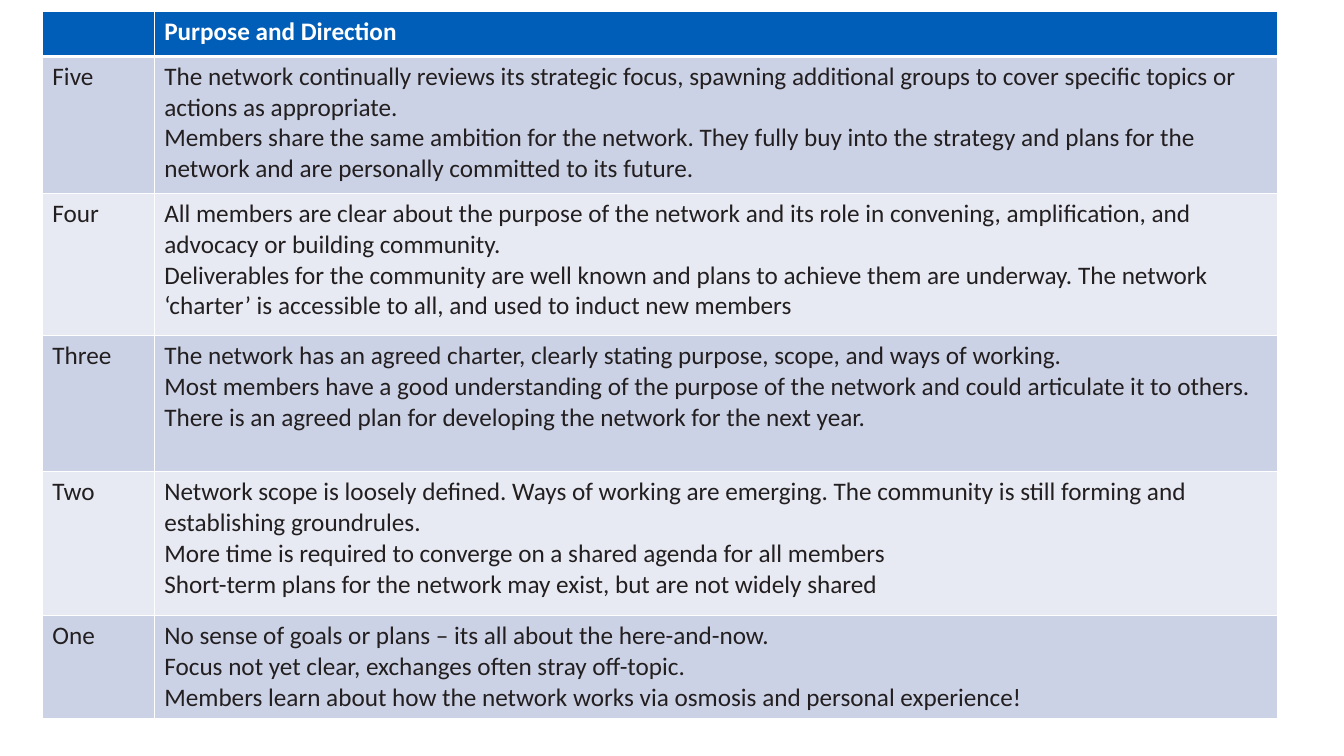
"""Builds a slide with a maturity table for a network's purpose and direction."""
from lxml.etree import SubElement
from pptx import Presentation
from pptx.dml.color import RGBColor
from pptx.oxml.ns import qn
from pptx.util import Pt

PX = 9144
WHITE = RGBColor(0xFF, 0xFF, 0xFF)
INK = RGBColor(0x23, 0x1F, 0x20)
BLUE = RGBColor(0x00, 0x5E, 0xB8)
BANDS = [RGBColor(0xE7, 0xEA, 0xF3), RGBColor(0xCC, 0xD2, 0xE6)]

COLUMN_WIDTHS = [111, 1114]
LEVELS = [
    (45, "", ["Purpose and Direction"]),
    (136, "Five", [
        "The network continually reviews its strategic focus, spawning additional groups to cover specific topics or actions as appropriate.",
        "Members share the same ambition for the network. They fully buy into the strategy and plans for the network and are personally committed to its future.",
    ]),
    (141, "Four", [
        "All members are clear about the purpose of the network and its role in convening, amplification, and advocacy or building community.",
        "Deliverables for the community are well known and plans to achieve them are underway. The network ‘charter’ is accessible to all, and used to induct new members",
    ]),
    (135, "Three", [
        "The network has an agreed charter, clearly stating purpose, scope, and ways of working.",
        "Most members have a good understanding of the purpose of the network and could articulate it to others.",
        "There is an agreed plan for developing the network for the next year.",
    ]),
    (143, "Two", [
        "Network scope is loosely defined. Ways of working are emerging. The community is still forming and establishing groundrules.",
        "More time is required to converge on a shared agenda for all members",
        "Short-term plans for the network may exist, but are not widely shared",
    ]),
    (101, "One", [
        "No sense of goals or plans – its all about the here-and-now.",
        "Focus not yet clear, exchanges often stray off-topic.",
        "Members learn about how the network works via osmosis and personal experience!",
    ]),
]


def add_border(cell, side, points):
    line = SubElement(cell._tc.get_or_add_tcPr(), qn(f"a:ln{side}"), w=str(Pt(points)))
    fill = SubElement(line, qn("a:solidFill"))
    SubElement(fill, qn("a:srgbClr"), val=str(WHITE))


deck = Presentation()
deck.slide_width = 1333 * PX
deck.slide_height = 750 * PX
page = deck.slides.add_slide(deck.slide_layouts[6])

table_height = sum(height for height, name, statements in LEVELS)
frame = page.shapes.add_table(
    len(LEVELS), len(COLUMN_WIDTHS),
    42 * PX, 11 * PX, sum(COLUMN_WIDTHS) * PX, table_height * PX,
)
table = frame.table
for column, width in zip(table.columns, COLUMN_WIDTHS):
    column.width = width * PX

for index, (height, name, statements) in enumerate(LEVELS):
    row = table.rows[index]
    row.height = height * PX
    is_header = index == 0
    for cell, text in zip(row.cells, [name, "\n".join(statements)]):
        for side in "LRTB":
            on_header_rule = (index, side) in [(0, "B"), (1, "T")]
            add_border(cell, side, 3 if on_header_rule else 1)
        cell.fill.solid()
        cell.fill.fore_color.rgb = BLUE if is_header else BANDS[index % 2]
        cell.text_frame.text = text
        for para in cell.text_frame.paragraphs:
            para.font.size = Pt(18)
            for span in para.runs:
                span.font.name = "Calibri"
                span.font.size = Pt(18)
                span.font.bold = is_header
                span.font.color.rgb = WHITE if is_header else INK

deck.save("out.pptx")
